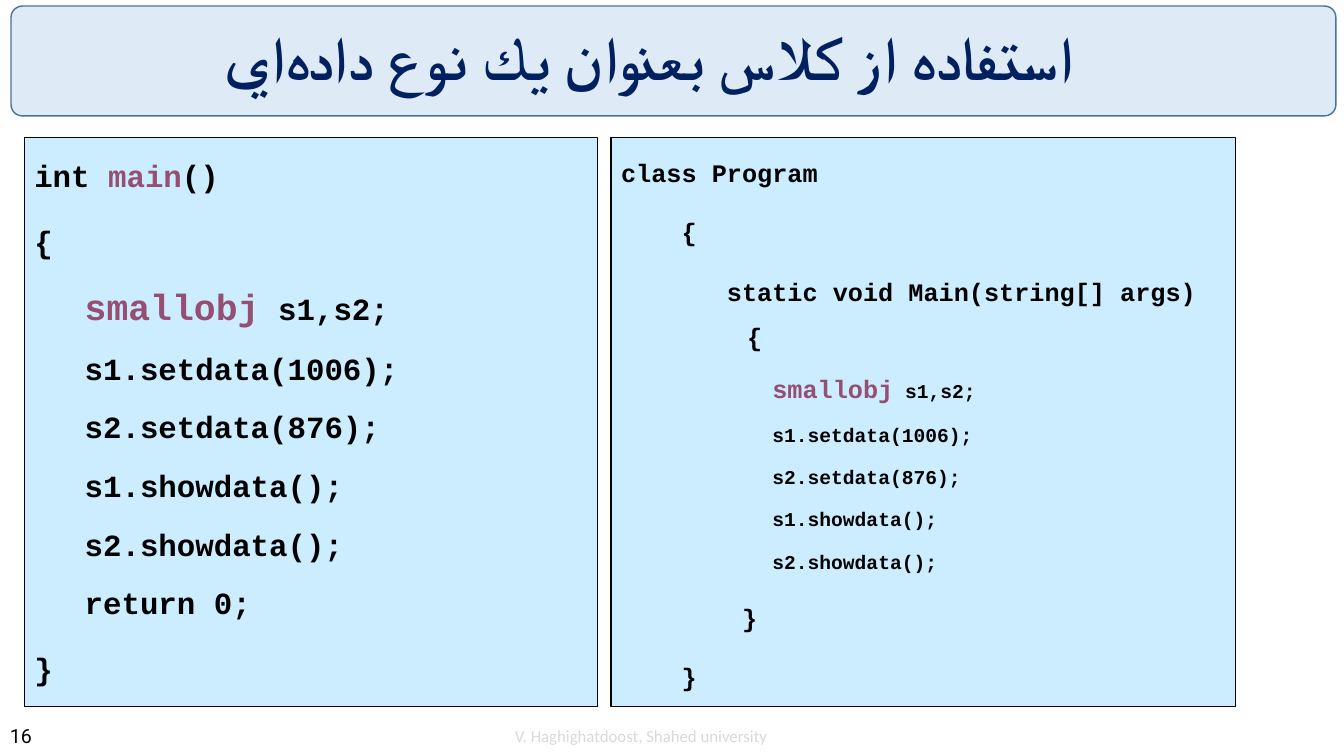
from pptx import Presentation
from pptx.dml.color import RGBColor
from pptx.enum.shapes import MSO_SHAPE
from pptx.enum.text import MSO_ANCHOR, MSO_AUTO_SIZE, PP_ALIGN
from pptx.oxml.ns import qn
from pptx.util import Inches, Pt
from lxml import etree

NAVY = RGBColor(0x00, 0x20, 0x60)
PALE_BLUE = RGBColor(0xDE, 0xEB, 0xF7)
STEEL = RGBColor(0x43, 0x73, 0x9E)
SKY = RGBColor(0xCC, 0xEC, 0xFF)
PLUM = RGBColor(0x95, 0x4F, 0x72)
BLACK = RGBColor(0, 0, 0)
GREY = RGBColor(0xD9, 0xD9, 0xD9)

NON_JOINER = chr(0x200C)  # Persian half-space inside the last word
TITLE = NON_JOINER.join(["استفاده از كلاس بعنوان يك نوع داده", "اي"])
FOOTER = "V. Haghighatdoost, Shahed university"
PAGE_NUMBER = "16"

CALLS = ["s1.setdata(1006);", "s2.setdata(876);", "s1.showdata();", "s2.showdata();"]


def statements(indent, size, big, calls):
    """Lines of the inner block: the declaration, then the calls."""
    declaration = (indent, 5, [("smallobj", big, PLUM), (" s1,s2;", size, BLACK)])
    return [declaration] + [(indent, 5, [(call, size, BLACK)]) for call in calls]


def line(text, size, indent=0, before=10):
    return (indent, before, [(text, size, BLACK)])


# Each line: indent in inches, space before in points, runs of (text, size, colour)
CPP_LINES = [
    (0, 10, [("int ", 22, BLACK), ("main", 22, PLUM), ("()", 22, BLACK)]),
    line("{", 22),
    *statements(0.5, 22, 26, CALLS + ["return 0;"]),
    line("}", 22),
]
CSHARP_LINES = [
    line("class Program", 18),
    line("{", 18, 0.6),
    line("static void Main(string[] args)", 18, 1.05),
    line("{", 18, 1.25, 0),
    *statements(1.5, 14, 18, CALLS),
    line("}", 18, 1.2),
    line("}", 18, 0.6),
]
PANEL_TOP, PANEL_HEIGHT = 1.36, 5.65
# left, width, line spacing, lines
PANELS = [(0.24, 5.69, 1.4, CPP_LINES), (6.06, 6.19, 1.5, CSHARP_LINES)]


def place(shape, left, top, width, height):
    shape.left, shape.top = Inches(left), Inches(top)
    shape.width, shape.height = Inches(width), Inches(height)


def paint(shape, fill, outline, weight):
    shape.fill.solid()
    shape.fill.fore_color.rgb = fill
    shape.line.color.rgb = outline
    shape.line.width = Pt(weight)


def style(span, font, size, color, bold=False):
    span.font.name = font
    span.font.size = Pt(size)
    span.font.color.rgb = color
    span.font.bold = bold


def fill_code(box, spacing, lines):
    frame = box.text_frame
    frame.auto_size = MSO_AUTO_SIZE.NONE
    frame.vertical_anchor = MSO_ANCHOR.TOP
    for number, (indent, before, spans) in enumerate(lines):
        para = frame.add_paragraph() if number else frame.paragraphs[0]
        para.line_spacing = spacing
        para.space_before = Pt(before)
        properties = para._p.get_or_add_pPr()
        properties.set("marL", str(Inches(indent)))
        properties.set("indent", "0")
        etree.SubElement(properties, qn("a:buNone"))
        for text, size, color in spans:
            span = para.add_run()
            span.text = text
            style(span, "Courier New", size, color, bold=True)


def add_label(page, text, at, font, size, color, align):
    box = page.shapes.add_textbox(0, 0, 0, 0)
    place(box, *at)
    frame = box.text_frame
    frame.word_wrap = True
    frame.vertical_anchor = MSO_ANCHOR.MIDDLE
    frame.text = text
    frame.paragraphs[0].alignment = align
    style(frame.paragraphs[0].runs[0], font, size, color)


def add_title(page):
    banner = page.shapes.add_shape(MSO_SHAPE.ROUNDED_RECTANGLE, 0, 0, 0, 0)
    place(banner, 0.11, 0.06, 13.14, 1.09)
    banner.adjustments[0] = 0.103
    banner.shadow.inherit = False
    paint(banner, PALE_BLUE, STEEL, 1)
    title = page.shapes.title
    title._element.addprevious(banner._element)

    place(title, 0.24, 0.15, 12.39, 0.9)
    frame = title.text_frame
    frame.auto_size = MSO_AUTO_SIZE.NONE
    frame.vertical_anchor = MSO_ANCHOR.MIDDLE
    frame.text = TITLE
    para = frame.paragraphs[0]
    para.alignment = PP_ALIGN.CENTER
    para.line_spacing = 0.9
    para._p.get_or_add_pPr().set("rtl", "1")
    span = para.runs[0]
    style(span, "Calibri", 44, NAVY, bold=True)
    etree.SubElement(span._r.get_or_add_rPr(), qn("a:cs"), typeface="Calibri")


def main():
    deck = Presentation()
    deck.slide_width, deck.slide_height = Inches(13.33), Inches(7.5)
    page = deck.slides.add_slide(deck.slide_layouts.get_by_name("Two Content"))

    add_title(page)
    bodies = list(page.placeholders)[1:]
    for body, (left, width, spacing, lines) in zip(bodies, PANELS):
        place(body, left, PANEL_TOP, width, PANEL_HEIGHT)
        paint(body, SKY, BLACK, 0.75)
        fill_code(body, spacing, lines)

    add_label(page, PAGE_NUMBER, (0, 7.1, 0.71, 0.4), "Roboto", 14, BLACK, PP_ALIGN.LEFT)
    add_label(page, FOOTER, (3.61, 7.1, 5.5, 0.4), "Calibri", 12, GREY, PP_ALIGN.CENTER)
    deck.save("out.pptx")


if __name__ == "__main__":
    main()
